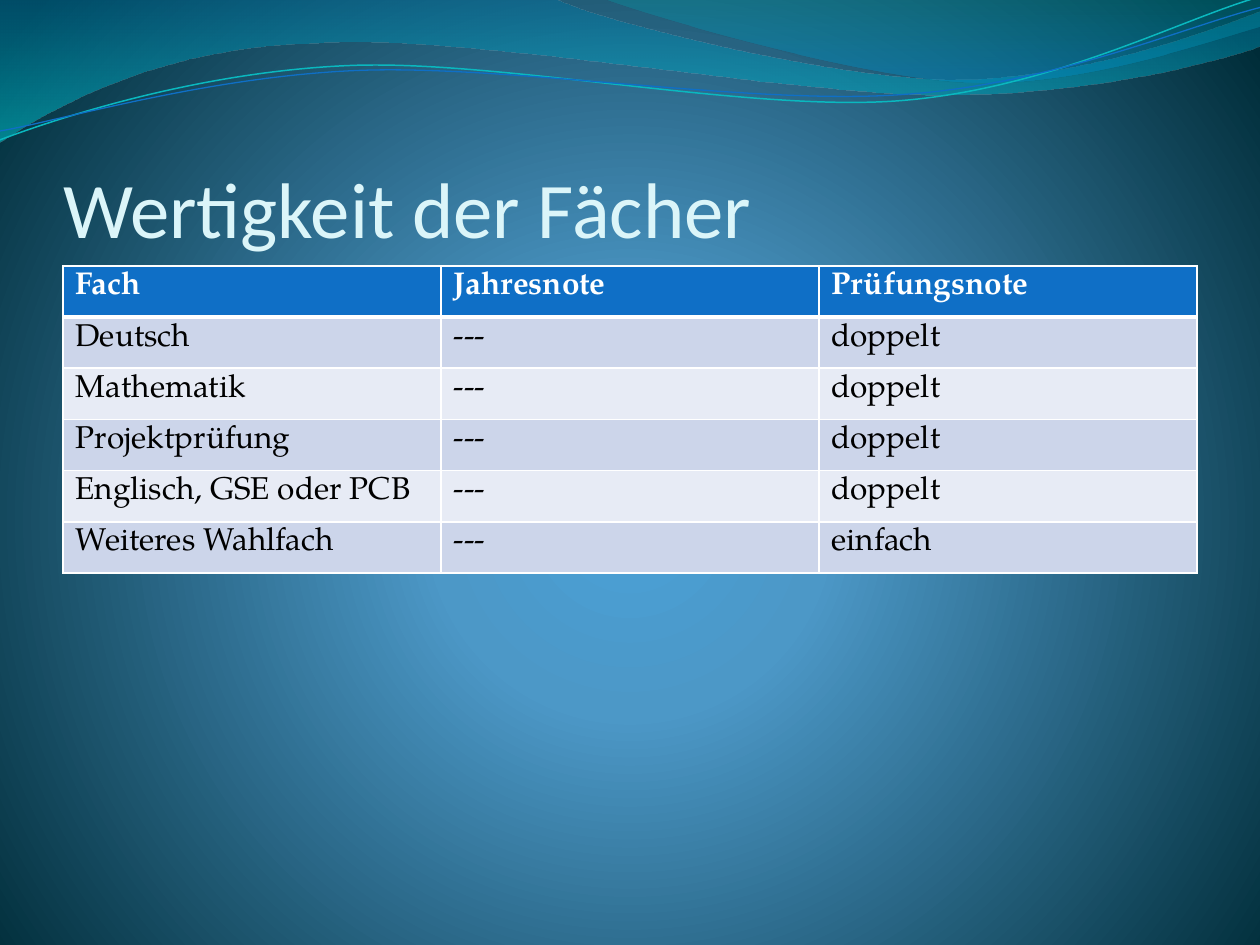
import dataclasses
import math

import lxml.etree
import pptx
import pptx.dml.color
import pptx.enum.text
import pptx.oxml.ns
import pptx.util

Inches = pptx.util.Inches
Pt = pptx.util.Pt
qn = pptx.oxml.ns.qn


@dataclasses.dataclass(frozen=True)
class Theme:
    title_font: str = "Calibri"
    body_font: str = "TeX Gyre Pagella"
    title_size: int = 45
    body_size: int = 18
    title: str = "DBF5F9"
    header: str = "0F6FC6"
    bands: tuple = ("CCD5EA", "E7EBF5")
    white: str = "FFFFFF"
    black: str = "000000"
    teal_line: str = "0AB8BF"
    blue_line: str = "0F6FC6"
    backdrop: tuple = ((0, "4AA0D6", 100), (25, "4C98C7", 100), (100, "002C38", 100))
    wide_wave: tuple = ((0, "0074A1", 45), (100, "00C6CF", 55))
    corner_wave: tuple = ((0, "00A1A9", 30), (80, "008BBF", 45))
    strand_tilt: float = -2.7


def rgb(value):
    return pptx.dml.color.RGBColor.from_string(value)


def add_node(parent, tag, **attributes):
    values = {name: str(value) for name, value in attributes.items()}
    return lxml.etree.SubElement(parent, qn(tag), values)


def write_text(frame, text, *, font, size, color, bold=False):
    para = frame.paragraphs[0]
    para.alignment = pptx.enum.text.PP_ALIGN.LEFT
    span = para.add_run()
    span.text = text
    span.font.name = font
    span.font.size = Pt(size)
    span.font.bold = bold
    span.font.color.rgb = rgb(color)


def fill_gradient(fill, owner, stops, focus=None):
    fill.gradient()
    gradient = owner.find(".//" + qn("a:gradFill"))
    for child in list(gradient):
        gradient.remove(child)
    stop_list = add_node(gradient, "a:gsLst")
    for position, color, opacity in stops:
        stop = add_node(stop_list, "a:gs", pos=position * 1000)
        tint = add_node(stop, "a:srgbClr", val=color)
        if opacity < 100:
            add_node(tint, "a:alpha", val=opacity * 1000)
    if focus:
        radial = add_node(gradient, "a:path", path="circle")
        sides = {side: value * 1000 for side, value in zip("ltrb", focus)}
        add_node(radial, "a:fillToRect", **sides)
    else:
        add_node(gradient, "a:lin", ang=5400000, scaled=1)


def turn(point, center, degrees):
    angle = math.radians(degrees)
    dx, dy = point[0] - center[0], point[1] - center[1]
    return (center[0] + dx * math.cos(angle) - dy * math.sin(angle),
            center[1] + dx * math.sin(angle) + dy * math.cos(angle))


def bend(shape, segments):
    lines = list(shape._element.iter(qn("a:lnTo")))
    for segment in segments:
        count = len(segment)
        members, lines = lines[:count], lines[count:]
        if count == 3:
            cubic = lxml.etree.Element(qn("a:cubicBezTo"))
            members[0].addprevious(cubic)
            for line in members:
                cubic.append(line[0])
                line.getparent().remove(line)


class Slide:
    def __init__(self, deck, theme):
        self.theme = theme
        self.page = deck.slides.add_slide(deck.slide_layouts[5])

    def backdrop(self, stops, focus):
        fill_gradient(self.page.background.fill, self.page._element, stops, focus)

    def curve(self, start, segments, closed):
        points = [start, *(point for segment in segments for point in segment)]
        points = [(Inches(x), Inches(y)) for x, y in points]
        builder = self.page.shapes.build_freeform(*points[0], scale=1.0)
        builder.add_line_segments(points[1:], close=closed)
        shape = builder.convert_to_shape()
        bend(shape, segments)
        shape.shadow.inherit = False
        return shape

    def wave(self, start, segments, stops):
        shape = self.curve(start, segments, True)
        fill_gradient(shape.fill, shape._element, stops)
        shape.line.fill.background()

    def strand(self, start, segments, center, color, width):
        tilt = self.theme.strand_tilt
        level = [[turn(point, center, -tilt) for point in segment] for segment in segments]
        shape = self.curve(turn(start, center, -tilt), level, False)
        shape.rotation = tilt
        shape.fill.background()
        shape.line.color.rgb = rgb(color)
        shape.line.width = Pt(width)

    def title(self, text, left, top, width, height):
        box = self.page.shapes.title
        box.left, box.top, box.width, box.height = map(Inches, (left, top, width, height))
        frame = box.text_frame
        frame.auto_size = pptx.enum.text.MSO_AUTO_SIZE.NONE
        frame.vertical_anchor = pptx.enum.text.MSO_ANCHOR.BOTTOM
        frame.margin_left = frame.margin_right = frame.margin_bottom = 0
        frame.margin_top = Inches(0.05)
        write_text(frame, text, font=self.theme.title_font,
                   size=self.theme.title_size, color=self.theme.title)

    def border(self, cell, widths):
        properties = cell._tc.get_or_add_tcPr()
        for index, (side, width) in enumerate(zip("LRTB", widths)):
            line = lxml.etree.Element(qn(f"a:ln{side}"), {"w": str(Pt(width))})
            solid = add_node(line, "a:solidFill")
            add_node(solid, "a:srgbClr", val=self.theme.white)
            properties.insert(index, line)

    def table(self, rows, left, top, width, height):
        theme = self.theme
        area = map(Inches, (left, top, width, height))
        grid = self.page.shapes.add_table(len(rows), len(rows[0]), *area).table
        for row, texts in enumerate(rows):
            header = row == 0
            for column, text in enumerate(texts):
                cell = grid.cell(row, column)
                cell.fill.solid()
                cell.fill.fore_color.rgb = rgb(
                    theme.header if header else theme.bands[(row - 1) % 2])
                write_text(cell.text_frame, text, font=theme.body_font,
                           size=theme.body_size, bold=header,
                           color=theme.white if header else theme.black)
                self.border(cell, (1, 1, 3 if row == 1 else 1, 3 if header else 1))


def main():
    deck = pptx.Presentation()
    deck.slide_width, deck.slide_height = Inches(10), Inches(7.5)
    theme = Theme()
    slide = Slide(deck, theme)
    slide.backdrop(theme.backdrop, (10, 110, 10, 100))
    slide.wave((0, 0), [
        [(4.4, -0.01)],
        [(4.76, 0.17), (6.64, 0.63), (7.58, 0.63)],
        [(8.53, 0.63), (9.58, 0.26), (10, 0.09)],
        [(10.01, 0.36)],
        [(9.83, 0.44), (8.7, 0.76), (7.46, 0.75)],
        [(6.22, 0.75), (3.82, 0.28), (2.57, 0.34)],
        [(1.29, 0.36), (0.46, 0.83), (-0.01, 1.13)],
    ], theme.wide_wave)
    slide.wave((4.79, -0.01), [
        [(5.09, 0.11), (6.82, 0.62), (7.69, 0.65)],
        [(8.56, 0.69), (9.61, 0.32), (10, 0.21)],
        [(10, 0)],
    ], theme.corner_wave)
    slide.strand((0, 1.11), [
        [(0.48, 0.93), (1.58, 0.57), (2.77, 0.52)],
        [(3.95, 0.47), (5.93, 0.89), (7.13, 0.8)],
        [(8.33, 0.71), (9.38, 0.15), (9.98, -0.02)],
    ], (4.99, 0.57), theme.teal_line, 0.85)
    slide.strand((0, 1.04), [
        [(0.47, 0.96), (1.64, 0.61), (2.83, 0.56)],
        [(4.03, 0.51), (5.97, 0.84), (7.17, 0.75)],
        [(8.36, 0.67), (9.41, 0.21), (10, 0.06)],
    ], (5, 0.59), theme.blue_line, 0.75)
    slide.title("Wertigkeit der Fächer", 0.5, 0.77, 9, 1.25)
    slide.table([
        ("Fach", "Jahresnote", "Prüfungsnote"),
        ("Deutsch", "---", "doppelt"),
        ("Mathematik", "---", "doppelt"),
        ("Projektprüfung", "---", "doppelt"),
        ("Englisch, GSE oder PCB", "---", "doppelt"),
        ("Weiteres Wahlfach", "---", "einfach"),
    ], 0.5, 2.11, 9, 2.44)
    deck.save("out.pptx")


if __name__ == "__main__":
    main()
